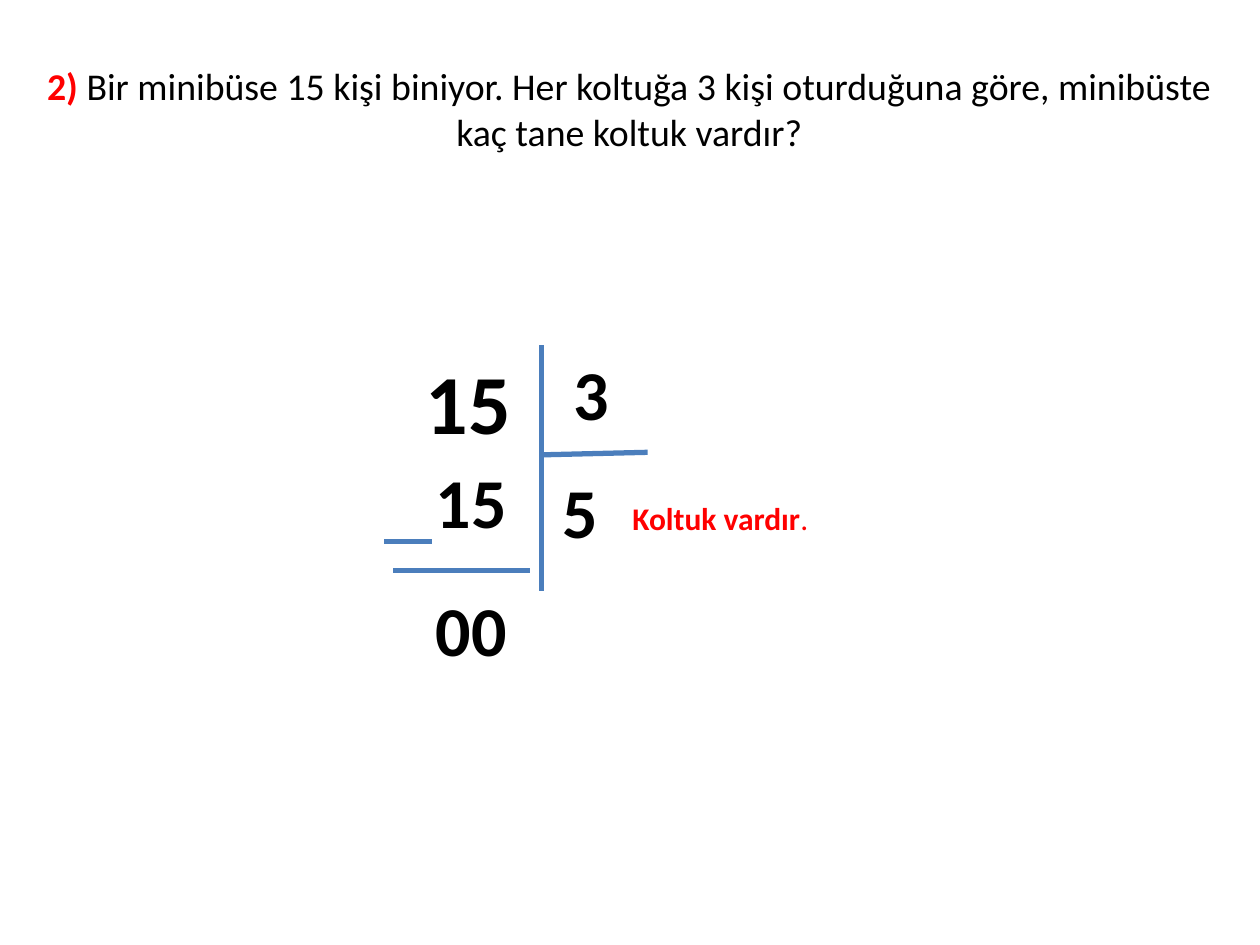
import pptx
import pptx.util
import pptx.dml.color
import pptx.enum.shapes
import pptx.enum.text
import pptx.oxml.ns
import lxml.etree

Inches = pptx.util.Inches
COLORS = {"ink": "000000", "red": "FF0000", "rule": "4B7EBC"}


def color(name):
    """Return the named colour."""
    return pptx.dml.color.RGBColor.from_string(COLORS[name])


def label(slide, box, parts, size, align="LEFT"):
    """Add a text box of (text, colour, bold) parts."""
    frame = slide.shapes.add_textbox(*map(Inches, box)).text_frame
    frame.word_wrap = True
    line = frame.paragraphs[0]
    line.alignment = getattr(pptx.enum.text.PP_ALIGN, align)
    for text, ink, bold in parts:
        run = line.add_run()
        run.text = text
        run.font.name = "Calibri"
        run.font.size = pptx.util.Pt(size)
        run.font.bold = bold
        run.font.color.rgb = color(ink)


def digits(slide, text, box, size=40):
    """Add one bold number of the division."""
    label(slide, box, [(text, "ink", True)], size)


def rule(slide, *ends):
    """Add a straight blue line without shadow."""
    kind = pptx.enum.shapes.MSO_CONNECTOR.STRAIGHT
    line = slide.shapes.add_connector(kind, *map(Inches, ends))
    line.line.color.rgb = color("rule")
    line.line.width = pptx.util.Pt(3)
    lxml.etree.SubElement(line._element.spPr, pptx.oxml.ns.qn("a:effectLst"))


def main():
    """Build the division problem slide."""
    deck = pptx.Presentation()
    deck.slide_width, deck.slide_height = Inches(10), Inches(7.5)
    slide = deck.slides.add_slide(deck.slide_layouts[6])

    ask = ("Bir minibüse 15 kişi biniyor. Her koltuğa 3 kişi oturduğuna göre, "
           "minibüste kaç tane koltuk vardır?")
    label(slide, (0.23, 0.45, 9.53, 0.85),
          [("2) ", "red", True), (ask, "ink", False)], 21.6, "CENTER")

    for ends in ((4.3, 2.74, 4.3, 4.69), (4.3, 3.61, 5.14, 3.59),
                 (3.12, 4.53, 4.21, 4.53), (3.05, 4.3, 3.43, 4.3)):
        rule(slide, *ends)

    digits(slide, "15", (3.28, 2.73, 0.94, 0.91), 48)
    digits(slide, "3", (4.45, 2.73, 0.7, 0.77))
    digits(slide, "5", (4.37, 3.67, 0.86, 0.77))
    digits(slide, "15", (3.36, 3.59, 1.33, 0.77))
    digits(slide, "00", (3.36, 4.61, 1.09, 0.77))
    label(slide, (4.92, 3.91, 2.27, 0.4),
          [("Koltuk vardır", "red", True), (".", "red", False)], 18)

    deck.save("out.pptx")


if __name__ == "__main__":
    main()
